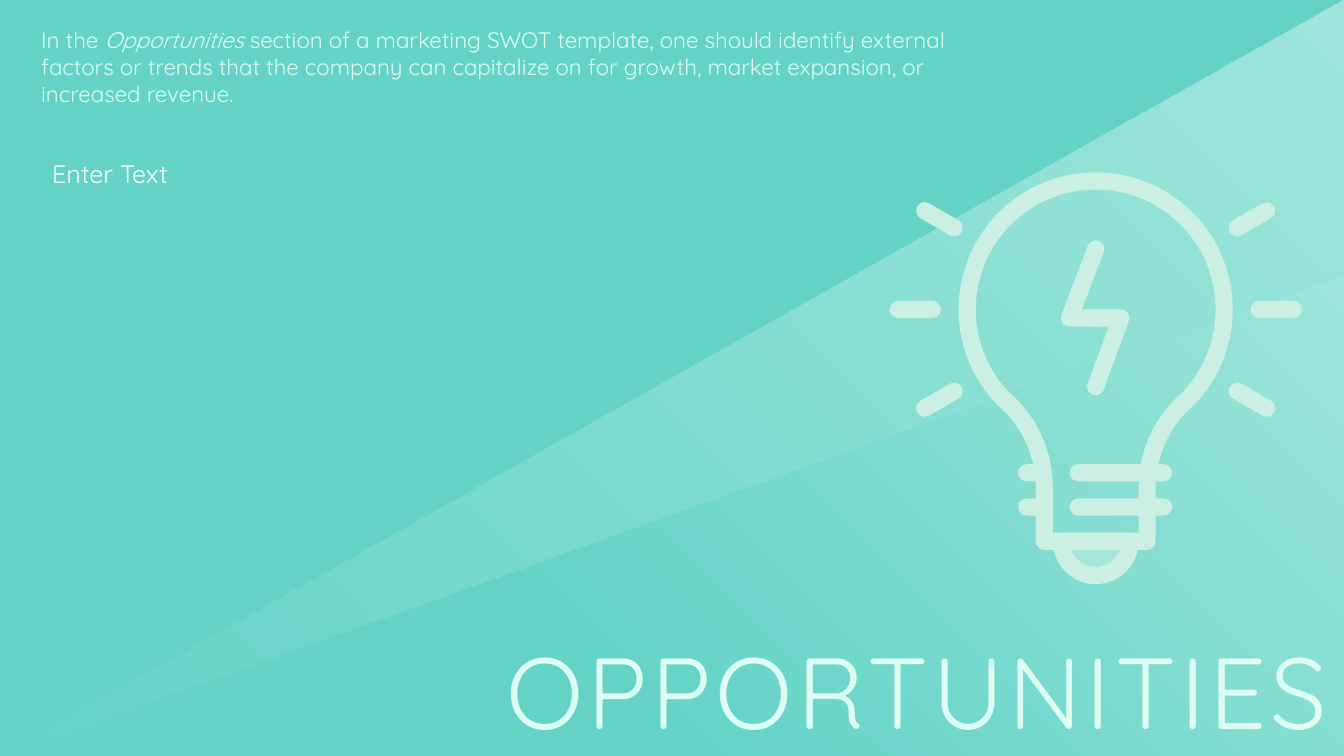
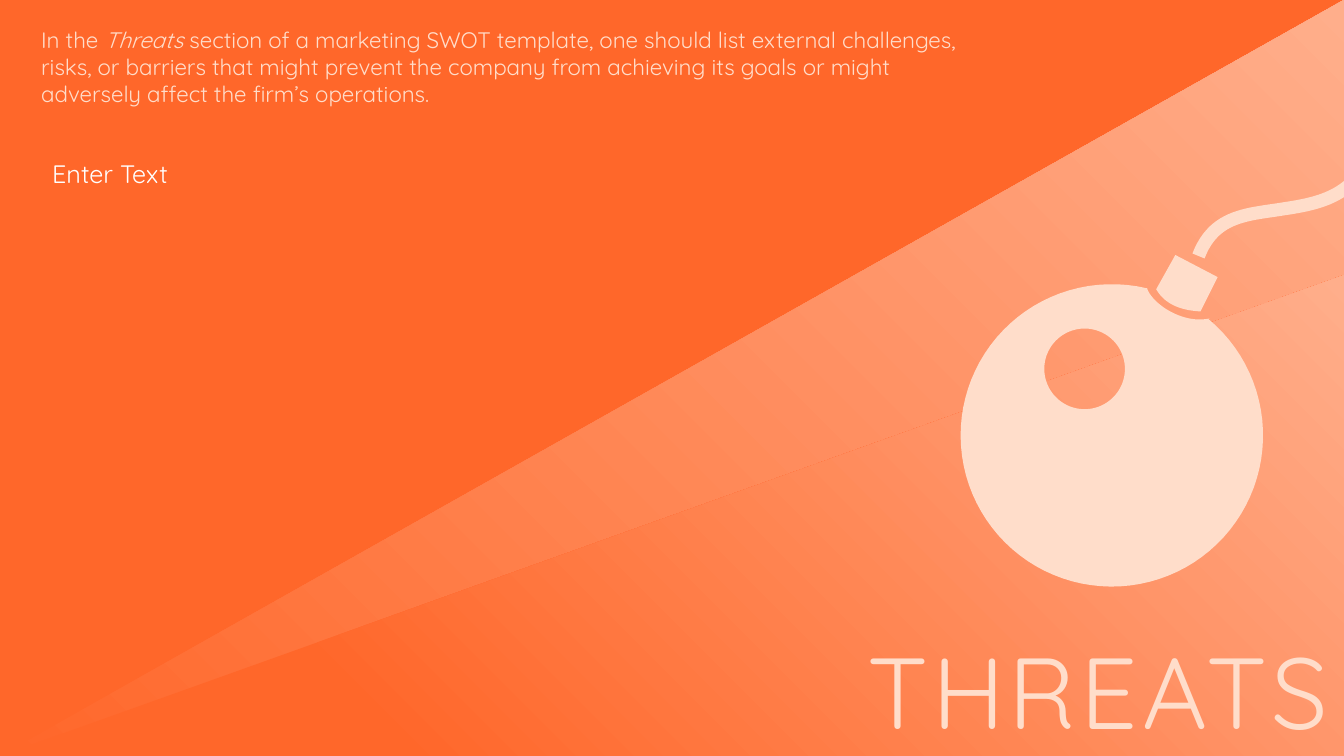
import math

from lxml import etree
from pptx import Presentation
from pptx import util as u
from pptx.dml.color import RGBColor
from pptx.enum import shapes, text
from pptx.oxml import ns

CELL = u.Inches(0.1)
COLS, ROWS = 133.33, 75
FONT = "Quicksand"
STROKE = 1.7
THEMES = {
    "opportunities": {"base": "64D3C6", "glow": "9DE5DB", "text": "DDFEF3",
                      "icon": "CCEFE3", "body": "FFFFFF"},
    "threats": {"base": "FF672A", "glow": "FFAE8B", "text": "FFDDCA",
                "icon": "FFDDCA", "body": "FFFFFF"},
}
FRAME = {"word_wrap": True, "vertical_anchor": text.MSO_ANCHOR.TOP,
         "auto_size": text.MSO_AUTO_SIZE.SHAPE_TO_FIT_TEXT}
TITLE = {"name": FONT, "size": u.Pt(72), "bold": False}
INTRO = {"name": FONT, "size": u.Pt(16)}
BODY = {"name": FONT, "size": u.Pt(18)}


def cells(*values):
    return [round(v * CELL) for v in values]


def apply(obj, values):
    for name, value in values.items():
        setattr(obj, name, value)


def arc(cx, cy, r, start, end, steps=90):
    angles = [math.radians(start + (end - start) * i / steps) for i in range(steps + 1)]
    return [(cx + r * math.cos(a), cy + r * math.sin(a)) for a in angles]


def curve(p0, p1, p2, p3, steps=24):
    points = []
    for i in range(steps + 1):
        t = i / steps
        weights = ((1 - t) ** 3, 3 * t * (1 - t) ** 2, 3 * t * t * (1 - t), t ** 3)
        points.append(tuple(sum(w * p[k] for w, p in zip(weights, (p0, p1, p2, p3)))
                            for k in (0, 1)))
    return points


class Deck:
    def __init__(self):
        self.prs = Presentation()
        self.prs.slide_width, self.prs.slide_height = cells(COLS, ROWS)

    def color(self, name):
        return RGBColor.from_string(self.theme[name])

    def slide(self, theme, glow_start):
        self.theme = THEMES[theme]
        self.s = self.prs.slides.add_slide(self.prs.slide_layouts[5])
        self.s.background.fill.solid()
        self.s.background.fill.fore_color.rgb = self.color("base")
        self.beam(0, 0)
        self.beam(27.3, glow_start)

    def beam(self, top, start):
        sp = self.s.shapes.add_shape(shapes.MSO_SHAPE.RIGHT_TRIANGLE,
                                     *cells(0, top, COLS, ROWS - top))
        sp._element.spPr.xfrm.set("flipH", "1")
        sp.shadow.inherit = False
        sp.line.fill.background()
        sp.fill.gradient()
        sp.fill.gradient_angle = 135
        for stop, name, position in zip(sp.fill.gradient_stops, ("base", "glow"), (start, 1)):
            stop.color.rgb = self.color(name)
            stop.position = position

    def run(self, p, content, style, color):
        r = p.add_run()
        r.text = content
        apply(r.font, style)
        r.font.color.rgb = self.color(color)
        return r

    def title(self, content):
        sp = self.s.shapes.title
        self.s.shapes._spTree.append(sp._element)
        left, top, width, height = cells(48.2, 61.9, 84.6, 13.1)
        apply(sp, {"left": left, "top": top, "width": width, "height": height})
        apply(sp.text_frame, FRAME)
        p = sp.text_frame.paragraphs[0]
        p.alignment = text.PP_ALIGN.RIGHT
        r = self.run(p, content, TITLE, "text")
        r.font._element.set("spc", "300")

    def textbox(self, top, width, height):
        sp = self.s.shapes.add_textbox(*cells(3.1, top, width, height))
        apply(sp.text_frame, FRAME)
        return sp.text_frame.paragraphs[0]

    def intro(self, section, rest):
        p = self.textbox(2.1, 94.1, 9.4)
        for content, italic in (("In the ", False), (section, True), (rest, False)):
            self.run(p, content, {**INTRO, "italic": italic}, "text")

    def entry(self, content):
        p = self.textbox(15.2, 66.3, 4)
        p.space_after = u.Pt(13.2)
        p._p.get_or_add_pPr().set("marL", str(cells(1.1)[0]))
        self.run(p, content, BODY, "body")

    def icon(self):
        self.group = self.s.shapes.add_group_shape()

    def paint(self, sp, alpha=None):
        sp.shadow.inherit = False
        sp.line.fill.background()
        sp.fill.solid()
        sp.fill.fore_color.rgb = self.color("icon")
        if alpha is not None:
            clr = sp._element.spPr.find(".//" + ns.qn("a:srgbClr"))
            etree.SubElement(clr, ns.qn("a:alpha")).set("val", str(alpha * 1000))

    def pill(self, cx, cy, length, angle=0):
        sp = self.group.shapes.add_shape(
            shapes.MSO_SHAPE.ROUNDED_RECTANGLE,
            *cells(cx - length / 2, cy - STROKE / 2, length, STROKE))
        sp.adjustments[0] = 0.5
        sp.rotation = angle
        self.paint(sp)

    def outline(self, *contours, closed=True):
        first, *others = [[cells(*point) for point in c] for c in contours]
        builder = self.group.shapes.build_freeform(*first[0])
        builder.add_line_segments(first[1:], close=closed)
        for contour in others:
            builder.move_to(*contour[0])
            builder.add_line_segments(contour[1:], close=closed)
        sp = builder.convert_to_shape()
        self.paint(sp)
        return sp

    def stroke(self, points, width=STROKE, closed=False, cap="rnd", alpha=None):
        sp = self.outline(points, closed=closed)
        if alpha is None:
            sp.fill.background()
        else:
            self.paint(sp, alpha)
        sp.line.color.rgb = self.color("icon")
        sp.line.width = cells(width)[0]
        ln = sp.line._get_or_add_ln()
        ln.set("cap", cap)
        etree.SubElement(ln, ns.qn("a:round"))

    def bulb(self):
        cx, cy = 108.7, 30.7
        base, half = 53.7, 5.1
        self.icon()
        self.stroke(arc(cx, base, 3.4, 0, 180), closed=True, alpha=50)
        neck = curve((cx - 9, cy + 9), (102.2, 41.9), (cx - half, 45.1), (cx - half, 48.4))
        neck.append((cx - half, base))
        mirrored = [(2 * cx - x, y) for x, y in neck]
        self.stroke(arc(cx, cy, 12.75, 135, 405) + mirrored + neck[::-1], closed=True)
        for y in (46.9, 50.3):
            self.pill(102.5, y, 3)
            self.pill(111.2, y, 10.2)
        for angle in (0, 30, 150, 180, 210, 330):
            a = math.radians(angle)
            self.pill(cx + 17.9 * math.cos(a), cy + 17.9 * math.sin(a), 5.1, angle)
        self.stroke([(cx, 24.7), (106.1, 31.55), (111.2, 31.55), (cx, 38.35)])

    def bomb(self):
        self.icon()
        fuse = curve((118.9, 25.4), (120.5, 21.2), (124, 21.3), (127.5, 20.7))
        fuse += curve((127.5, 20.7), (131, 20.2), (133.5, 19.4), (135.2, 16.8))[1:]
        self.stroke(fuse, 1.3, cap="flat")
        socket = curve((119.1, 30.9), (117, 30.8), (115.5, 30.1), (114.7, 28.7))
        self.outline([(116.6, 25.3), (120.8, 27.5)] + socket)
        notch = curve((120, 31.6), (117.2, 32.2), (114.2, 30), (113.8, 28.6))
        body = arc(110.3, 43.2, 15, -50.4, 283.3) + notch[::-1]
        self.outline(body, arc(107.6, 36.6, 4, 360, 0))


def main():
    deck = Deck()
    pages = (
        ("opportunities", 0.38, "OPPORTUNITIES", "Opportunities",
         " section of a marketing SWOT template, one should identify external factors "
         "or trends that the company can capitalize on for growth, market expansion, "
         "or increased revenue.", deck.bulb),
        ("threats", 0.22, "THREATS", "Threats",
         " section of a marketing SWOT template, one should list external challenges, "
         "risks, or barriers that might prevent the company from achieving its goals "
         "or might adversely affect the firm’s operations.", deck.bomb),
    )
    for theme, glow_start, heading, section, rest, draw_icon in pages:
        deck.slide(theme, glow_start)
        deck.title(heading)
        deck.intro(section, rest)
        deck.entry("Enter Text")
        draw_icon()
    deck.prs.save("out.pptx")


if __name__ == "__main__":
    main()
